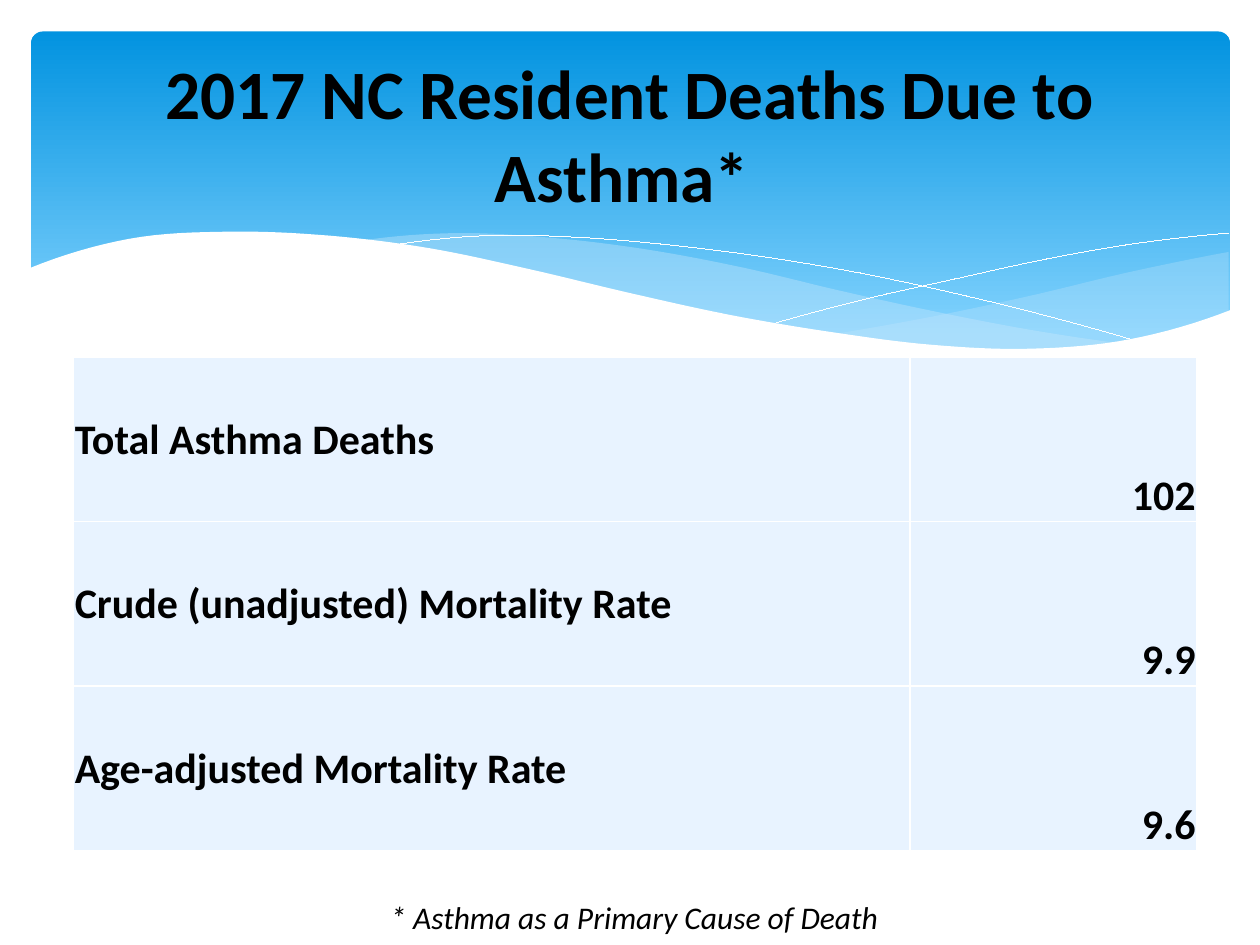
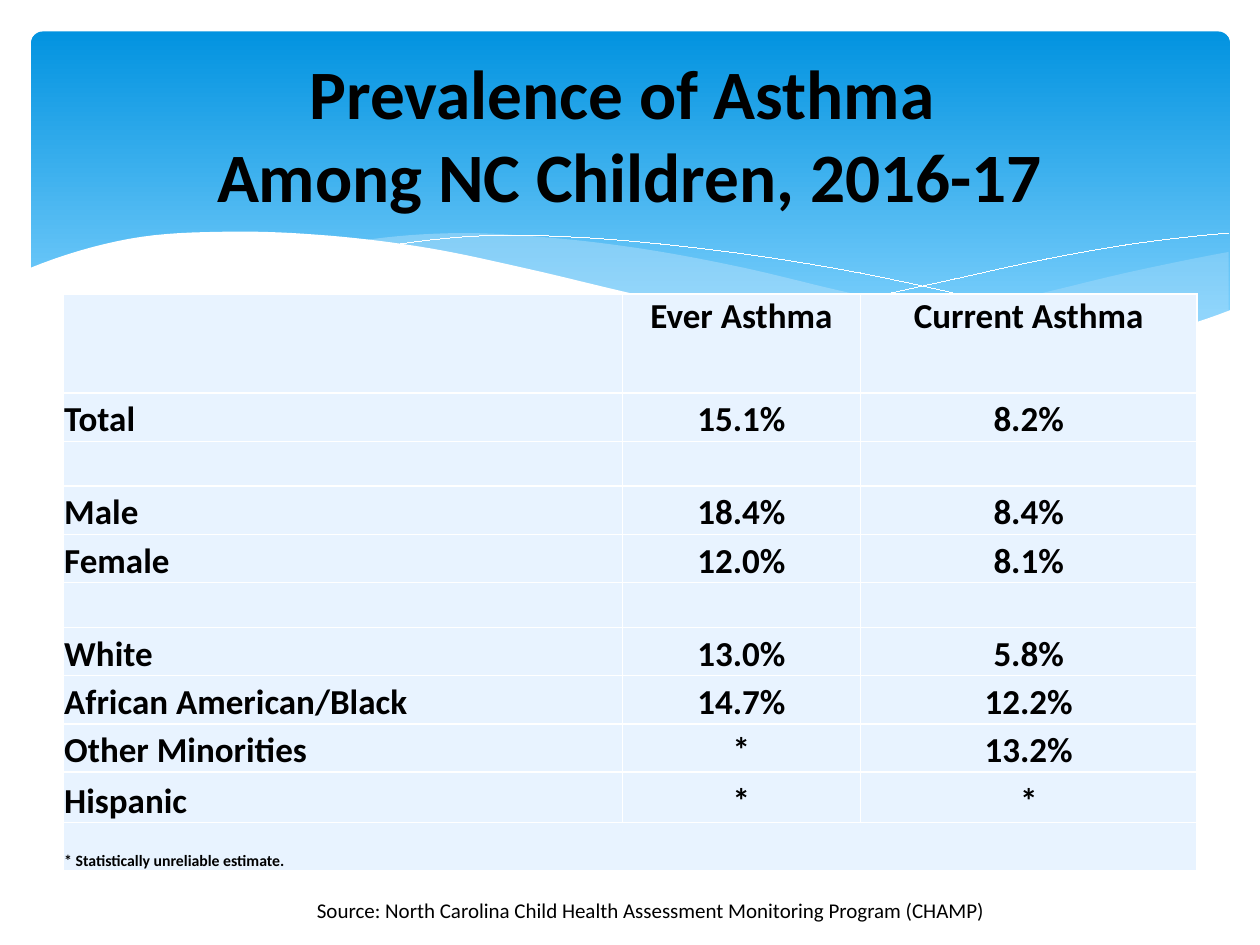
from lxml.etree import SubElement
from pptx import Presentation
from pptx.dml.color import RGBColor
from pptx.enum.shapes import MSO_SHAPE
from pptx.enum.text import MSO_ANCHOR, PP_ALIGN
from pptx.oxml.ns import qn
from pptx.util import Pt

BLACK = RGBColor(0x00, 0x00, 0x00)
WHITE = RGBColor(0xFF, 0xFF, 0xFF)
DEEP = RGBColor(0x02, 0x93, 0xE0)
SKY = RGBColor(0x83, 0xD3, 0xFE)
PALE = RGBColor(0xC6, 0xE7, 0xFC)
ICE = RGBColor(0xE8, 0xF3, 0xFF)
FONT = "Calibri"
LEFT, MID, RIGHT = PP_ALIGN.LEFT, PP_ALIGN.CENTER, PP_ALIGN.RIGHT
TOP, CENTRE, BASE = MSO_ANCHOR.TOP, MSO_ANCHOR.MIDDLE, MSO_ANCHOR.BOTTOM


def curve(left, right, knots, parts=8):
    """Return points of a smooth (Catmull-Rom) curve through evenly spaced heights."""
    first = 3 * knots[0] - 3 * knots[1] + knots[2]
    final = 3 * knots[-1] - 3 * knots[-2] + knots[-3]
    ys = [first, *knots, final]
    step = (right - left) / (len(knots) - 1)
    points = []
    for i in range(len(knots) - 1):
        a, b, c, d = ys[i:i + 4]
        for k in range(parts):
            t = k / parts
            y = b + t / 2 * (c - a + t * (2 * a - 5 * b + 4 * c - d
                                          + t * (3 * b - a - 3 * c + d)))
            points.append((left + (i + t) * step, y))
    return points + [(right, knots[-1])]


def write(para, text, size, bold=False, slant=False, align=LEFT):
    para.alignment = align
    for i, line in enumerate(text.split("\n")):
        if i:
            para.add_line_break()
        run = para.add_run()
        run.text = line
        font = run.font
        font.name, font.size, font.bold, font.italic = FONT, Pt(size), bold, slant
        font.color.rgb = BLACK


# Waves: a ribbon lies between two curves, a strand is one thin line,
# and the mask covers the foot of the band in white.
near = (curve(476, 702, [191, 181, 169, 155.5, 144])
        + curve(476, 702, [191, 197.7, 199.8, 194.8, 178])[::-1])
far = (curve(206, 643, [137.5, 133.2, 135.9, 142.6, 152.9, 165.9, 177.9, 188.4, 196.6])
       + curve(206, 643, [137.5, 146.2, 157.9, 170.2, 182.2, 191.6, 198.4, 200.2,
                          196.6])[::-1])
fall = curve(222.5, 653, [140.4, 134.7, 135.6, 140.1, 146.9, 156, 167.5, 180.7, 195.8])
rise = curve(441.4, 702, [185, 171.1, 159.4, 148, 139, 133.2])
mask = curve(16.6, 703.4, [153.4, 136.5, 132.4, 134.7, 141.9, 153.9, 167.5, 180,
                           189.7, 197, 199.3, 193.8, 177.1])
mask += [(703.4, 237), (16.6, 237)]

# Outline, fill (None for a strand), opacity in percent
WAVES = [
    (near, PALE, 29),
    (far, PALE, 40),
    (fall, None, 100),
    (rise, None, 100),
    (mask, WHITE, 100),
]

DEATHS = [
    ("Total Asthma Deaths", "102"),
    ("Crude (unadjusted) Mortality Rate", "9.9"),
    ("Age-adjusted Mortality Rate", "9.6"),
]
RATES = [
    ("", "Ever Asthma", "Current Asthma"),
    ("Total", "15.1%", "8.2%"),
    ("", "", ""),
    ("Male", "18.4%", "8.4%"),
    ("Female", "12.0%", "8.1%"),
    ("", "", ""),
    ("White", "13.0%", "5.8%"),
    ("African American/Black", "14.7%", "12.2%"),
    ("Other Minorities", "*", "13.2%"),
    ("Hispanic", "*", "*"),
    ("* Statistically unreliable estimate.", "", ""),
]
# Blank rows are a little lower; the header is tall
heights = [27.6 if line[0] else 25.6 for line in RATES]
heights[0], heights[-2] = 56.6, 28.8

PAGES = [
    {
        "title": "2017 NC Resident Deaths Due to Asthma* ",
        "data": DEATHS, "at": (42, 204), "cols": (478, 164), "rows": [94] * 3,
        "size": 24, "align": RIGHT, "label": CENTRE,
        "note": "* Asthma as a Primary Cause of Death",
        "foot": (216, 509.5, 294, 29), "small": 18, "slant": True,
    },
    {
        "title": "Prevalence of Asthma \nAmong NC Children, 2016-17",
        "data": RATES, "at": (36, 168), "cols": (319.6, 136.2, 192.2), "rows": heights,
        "size": 20, "align": MID, "label": BASE,
        "note": "Source: North Carolina Child Health Assessment Monitoring Program (CHAMP)",
        "foot": (174, 509.5, 418, 22), "small": 12, "slant": False,
    },
]

deck = Presentation()
deck.slide_width, deck.slide_height = Pt(720), Pt(540)

for page in PAGES:
    shapes = deck.slides.add_slide(deck.slide_layouts[6]).shapes

    # Band
    band = shapes.add_shape(MSO_SHAPE.ROUNDED_RECTANGLE,
                            Pt(17.8), Pt(18), Pt(685), Pt(194.4))
    band.adjustments[0] = 0.034
    band.shadow.inherit = False
    band.line.fill.background()
    band.fill.gradient()
    band.fill.gradient_angle = 270
    for stop, place, shade in zip(band.fill.gradient_stops, (0, 0.9), (DEEP, SKY)):
        stop.position = place
        stop.color.rgb = shade

    # Waves
    for points, shade, alpha in WAVES:
        start, *rest = [(Pt(x), Pt(y)) for x, y in points]
        path = shapes.build_freeform(*start)
        path.add_line_segments(rest, close=shade is not None)
        wave = path.convert_to_shape()
        wave.shadow.inherit = False
        if shade is None:
            wave.fill.background()
            wave.line.color.rgb = WHITE
            wave.line.width = Pt(0.01)
            continue
        wave.line.fill.background()
        wave.fill.solid()
        wave.fill.fore_color.rgb = shade
        if alpha < 100:
            tint = wave._element.spPr.find(qn("a:solidFill"))[0]
            SubElement(tint, qn("a:alpha"), val=str(alpha * 1000))

    # Table
    data, cols, rows = page["data"], page["cols"], page["rows"]
    left, top = page["at"]
    table = shapes.add_table(len(rows), len(cols), Pt(left), Pt(top),
                             Pt(sum(cols)), Pt(sum(rows))).table
    table.first_row = table.horz_banding = False
    for col, width in zip(table.columns, cols):
        col.width = Pt(width)
    for r, (line, height) in enumerate(zip(data, rows)):
        table.rows[r].height = Pt(height)
        header = not line[0] and any(line)
        remark = line[0].startswith("* ")
        for c, text in enumerate(line):
            cell = table.cell(r, c)
            cell.margin_left = cell.margin_right = cell.margin_top = Pt(0.72)
            cell.margin_bottom = 0
            cell.vertical_anchor = TOP if header else BASE if c else page["label"]
            props = cell._tc.get_or_add_tcPr()
            for side in ("lnL", "lnR", "lnT", "lnB"):
                rule = SubElement(props, qn("a:" + side), w=str(Pt(1)))
                paint = SubElement(rule, qn("a:solidFill"))
                SubElement(paint, qn("a:srgbClr"), val=str(WHITE))
            cell.fill.solid()
            cell.fill.fore_color.rgb = ICE
            if text:
                write(cell.text_frame.paragraphs[0], text, 9 if remark else page["size"],
                      bold=True, align=page["align"] if c else LEFT)
        if remark:
            table.cell(r, 0).merge(table.cell(r, len(cols) - 1))

    # Title and footnote
    head = shapes.add_textbox(Pt(36), Pt(26.8), Pt(648), Pt(98.6)).text_frame
    head.word_wrap = True
    head.vertical_anchor = CENTRE
    write(head.paragraphs[0], page["title"], 39.6, bold=True, align=MID)

    foot = shapes.add_textbox(*map(Pt, page["foot"])).text_frame
    foot.word_wrap = False
    write(foot.paragraphs[0], page["note"], page["small"], slant=page["slant"])

deck.save("out.pptx")
